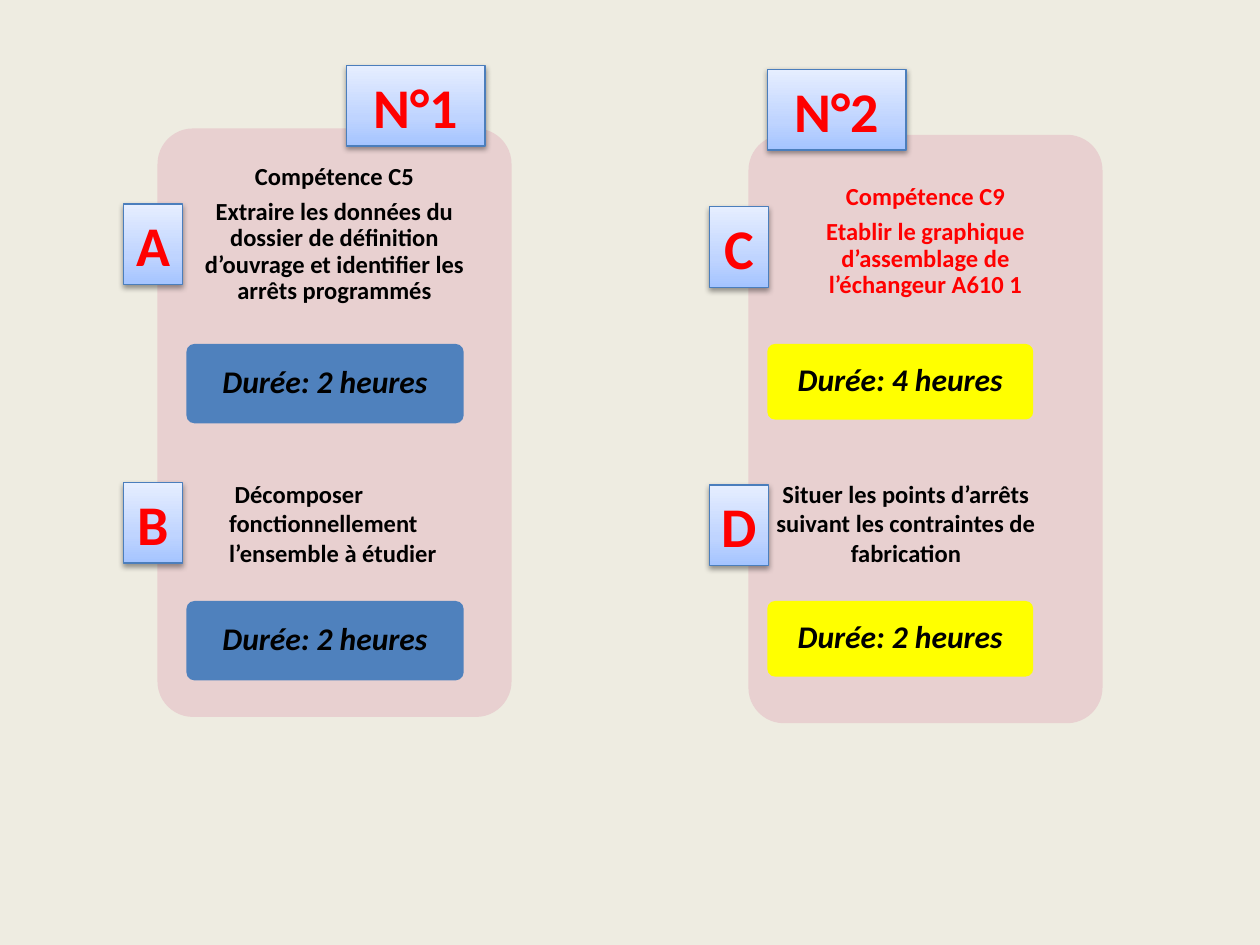
"""Build a slide with two work sessions, their tasks and their durations."""
from typing import NamedTuple

from pptx import Presentation
from pptx.dml.color import RGBColor
from pptx.enum.shapes import MSO_SHAPE
from pptx.enum.text import MSO_ANCHOR, PP_ALIGN
from pptx.oxml import parse_xml
from pptx.oxml.ns import nsdecls
from pptx.util import Inches, Pt

RECTANGLE, ROUNDED = MSO_SHAPE.RECTANGLE, MSO_SHAPE.ROUNDED_RECTANGLE
TOP, MIDDLE = MSO_ANCHOR.TOP, MSO_ANCHOR.MIDDLE
LEFT, CENTER = PP_ALIGN.LEFT, PP_ALIGN.CENTER
BLACK = RGBColor(0x00, 0x00, 0x00)
RED = RGBColor(0xFF, 0x00, 0x00)
YELLOW = RGBColor(0xFF, 0xFF, 0x00)
BLUE = RGBColor(0x4F, 0x81, 0xBD)
PINK = RGBColor(0xE8, 0xD0, 0xD0)
BEIGE = RGBColor(0xEE, 0xEC, 0xE1)
BADGE_LINE = RGBColor(0x4B, 0x7E, 0xBC)
FONT = "Calibri"
DURATION_TOPS = (2.73, 4.77)
TASK_TOP = 3.75
BADGE_HEIGHT = 0.64
LETTER_WIDTH = 0.47
LETTER_STEP = 2.21

BADGE_GRADIENT = (
    f'<a:gradFill {nsdecls("a")} rotWithShape="1"><a:gsLst>'
    '<a:gs pos="0"><a:srgbClr val="A4C4FF"/></a:gs>'
    '<a:gs pos="35000"><a:srgbClr val="BFD4FF"/></a:gs>'
    '<a:gs pos="100000"><a:srgbClr val="E6EEFF"/></a:gs>'
    '</a:gsLst><a:lin ang="16200000" scaled="1"/></a:gradFill>'
)
BADGE_SHADOW = (
    f'<a:effectLst {nsdecls("a")}>'
    '<a:outerShdw blurRad="40000" dist="20000" dir="5400000" rotWithShape="0">'
    '<a:srgbClr val="000000"><a:alpha val="38000"/></a:srgbClr>'
    '</a:outerShdw></a:effectLst>'
)


class Box(NamedTuple):
    left: float
    top: float
    width: float
    height: float


class Session(NamedTuple):
    panel: Box
    number: str
    number_left: float
    number_top: float
    skill: str
    skill_color: RGBColor
    skill_inset: float
    letters: str
    letter_left: float
    letter_top: float
    task: str
    task_box: Box
    task_align: PP_ALIGN
    durations: tuple[str, str]
    duration_left: float
    duration_width: float
    duration_height: float
    duration_color: RGBColor


SESSIONS = (
    Session(
        Box(1.25, 1.02, 2.81, 4.67), "N°1", 2.75, 0.52,
        "Compétence C5\nExtraire les données du dossier de définition "
        "d’ouvrage et identifier les arrêts programmés",
        BLACK, 0.2, "AB", 0.98, 1.62,
        " Décomposer fonctionnellement l’ensemble à étudier",
        Box(1.72, TASK_TOP, 2.19, 0.81), LEFT,
        ("Durée: 2 heures", "Durée: 2 heures"), 1.48, 2.2, 0.63, BLUE,
    ),
    Session(
        Box(5.94, 1.07, 2.81, 4.67), "N°2", 6.09, 0.55,
        "Compétence C9\nEtablir le graphique d’assemblage de "
        "l’échangeur A610 1",
        RED, 0.31, "CD", 5.63, 1.64,
        "Situer les points d’arrêts suivant les contraintes de fabrication",
        Box(5.94, TASK_TOP, 2.5, 0.81), CENTER,
        ("Durée: 4 heures", "Durée: 2 heures"), 6.09, 2.11, 0.6, YELLOW,
    ),
)


def write(shape, text: str, size: float, color: RGBColor, align=CENTER,
          anchor=MIDDLE, italic: bool = False, spacing: float = 1.0) -> None:
    """Fill a shape with bold text, one paragraph per line."""
    frame = shape.text_frame
    frame.word_wrap = True
    frame.vertical_anchor = anchor
    frame.text = text
    for paragraph in frame.paragraphs:
        paragraph.alignment = align
        paragraph.line_spacing = spacing
        paragraph.space_after = Pt(5) if spacing < 1 else Pt(0)
        for run in paragraph.runs:
            font = run.font
            font.name, font.size, font.bold = FONT, Pt(size), True
            font.italic = italic
            font.color.rgb = color


def add_card(slide, box: Box, color: RGBColor, side: float, top: float):
    """Add a borderless rounded card with the given text insets."""
    card = slide.shapes.add_shape(ROUNDED, *map(Inches, box))
    card.adjustments[0] = 0.1
    card.shadow.inherit = False
    card.fill.solid()
    card.fill.fore_color.rgb = color
    card.line.fill.background()
    frame = card.text_frame
    frame.margin_left = frame.margin_right = Inches(side)
    frame.margin_top = frame.margin_bottom = Inches(top)
    return card


def add_badge(slide, box: Box, text: str) -> None:
    """Add a shaded label with a soft shadow."""
    badge = slide.shapes.add_shape(RECTANGLE, *map(Inches, box))
    properties = badge.element.spPr
    properties.append(parse_xml(BADGE_GRADIENT))
    badge.line.color.rgb = BADGE_LINE
    badge.line.width = Pt(0.75)
    properties.append(parse_xml(BADGE_SHADOW))
    write(badge, text, 32, RED)


def add_session(slide, session: Session) -> None:
    """Draw one session panel with its tasks, durations and labels."""
    panel = add_card(slide, session.panel, PINK, 0.24, session.skill_inset)
    write(panel, session.skill, 14, session.skill_color, anchor=TOP, spacing=0.9)

    for top, duration in zip(DURATION_TOPS, session.durations):
        box = Box(session.duration_left, top, session.duration_width,
                  session.duration_height)
        card = add_card(slide, box, session.duration_color, 0.06, 0.06)
        write(card, duration, 18, BLACK, italic=True, spacing=0.9)

    task = slide.shapes.add_textbox(*map(Inches, session.task_box))
    write(task, session.task, 14, BLACK, session.task_align, TOP)

    add_badge(slide, Box(session.number_left, session.number_top, 1.1,
                         BADGE_HEIGHT), session.number)
    for row, letter in enumerate(session.letters):
        top = session.letter_top + row * LETTER_STEP
        add_badge(slide, Box(session.letter_left, top, LETTER_WIDTH,
                             BADGE_HEIGHT), letter)


def main() -> None:
    """Create and save the presentation."""
    presentation = Presentation()
    presentation.slide_width = Inches(10)
    presentation.slide_height = Inches(7.5)
    slide = presentation.slides.add_slide(presentation.slide_layouts[6])
    slide.background.fill.solid()
    slide.background.fill.fore_color.rgb = BEIGE
    for session in SESSIONS:
        add_session(slide, session)
    presentation.save("out.pptx")


if __name__ == "__main__":
    main()
